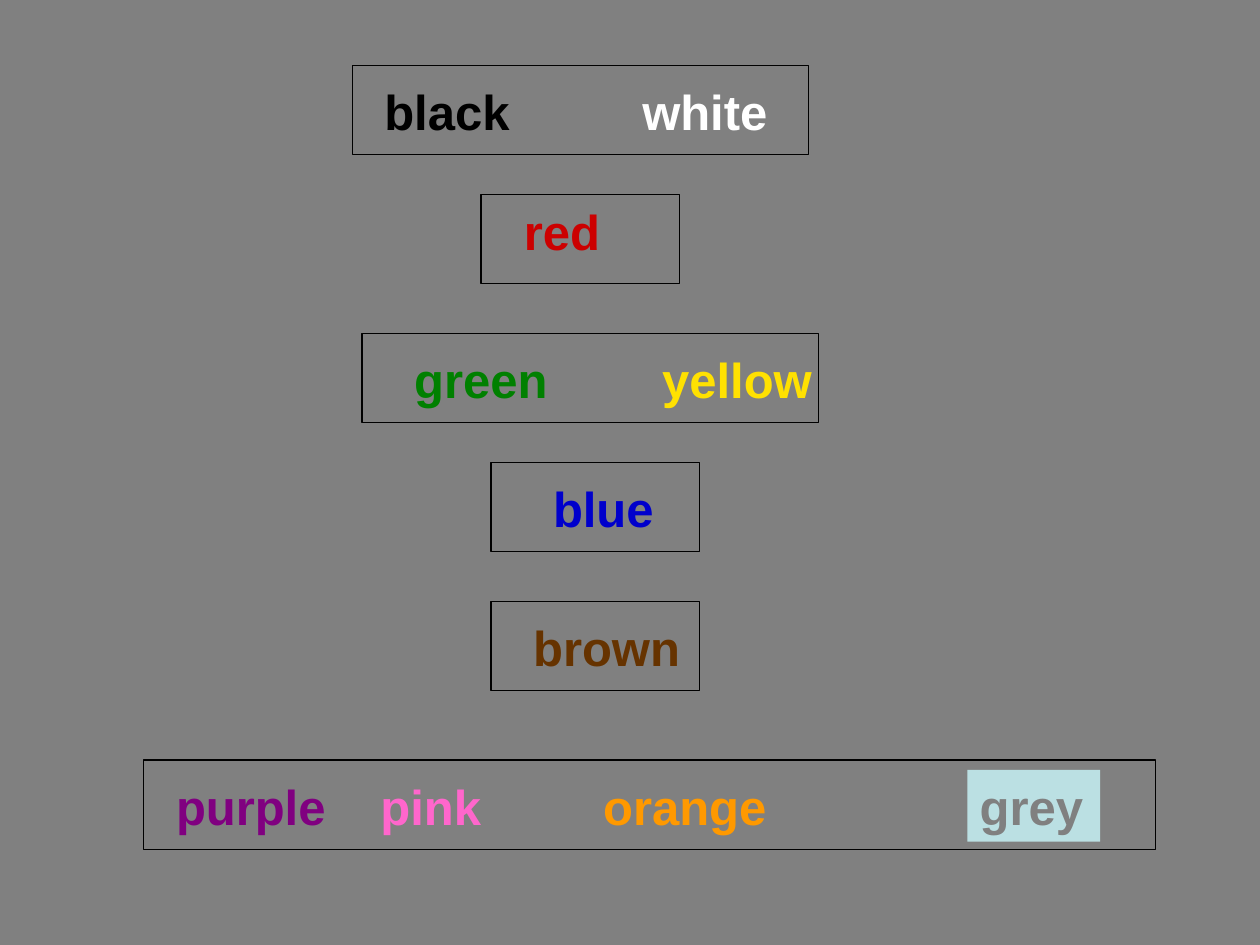
from pptx import Presentation
from pptx.dml.color import RGBColor
from pptx.enum.shapes import MSO_SHAPE
from pptx.enum.text import MSO_ANCHOR, MSO_AUTO_SIZE, PP_ALIGN
from pptx.util import Cm, Pt


def color(code):
    return RGBColor.from_string(code)


class Board:
    font = "Arial"
    size = 28
    ink = "000000"
    high = 1.45   # height of a word
    tall = 1.8    # height of a frame

    def __init__(self, slide, back):
        self.slide = slide
        fill = slide.background.fill
        fill.solid()
        fill.fore_color.rgb = color(back)

    def rect(self, left, top, width, height):
        shape = self.slide.shapes.add_shape(
            MSO_SHAPE.RECTANGLE, Cm(left), Cm(top), Cm(width), Cm(height))
        shape.shadow.inherit = False
        return shape

    def style(self, shape, text, code, wrap):
        frame = shape.text_frame
        frame.text = text
        frame.word_wrap = wrap
        frame.auto_size = MSO_AUTO_SIZE.SHAPE_TO_FIT_TEXT
        frame.vertical_anchor = MSO_ANCHOR.TOP
        line = frame.paragraphs[0]
        line.alignment = PP_ALIGN.LEFT
        font = line.runs[0].font
        font.name, font.size, font.bold = self.font, Pt(self.size), True
        font.color.rgb = color(code)

    def word(self, text, code, left, top, width, wrap):
        box = self.slide.shapes.add_textbox(
            Cm(left), Cm(top), Cm(width), Cm(self.high))
        self.style(box, text, code, wrap)

    def label(self, text, code, back, left, top, width):
        shape = self.rect(left, top, width, self.high)
        shape.fill.solid()
        shape.fill.fore_color.rgb = color(back)
        shape.line.fill.background()
        self.style(shape, text, code, False)

    def frame(self, left, top, width):
        shape = self.rect(left, top, width, self.tall)
        shape.fill.background()
        shape.line.color.rgb = color(self.ink)
        shape.line.width = Pt(0.75)


# Text, colour, left, top, width, wrap
WORDS = [
    ("black", "000000", 7.5, 1.52, 3.66, True),
    ("white", "FFFFFF", 12.7, 1.52, 3.6, True),
    ("red", "CC0000", 10.31, 3.94, 3.4, True),
    ("green", "008000", 8.1, 6.93, 3.76, True),
    ("yellow", "FFE101", 13.1, 6.93, 3.6, False),
    ("blue", "0000CC", 10.9, 9.53, 2.56, False),
    ("brown", "663300", 10.5, 12.32, 3.5, False),
    ("purple", "800080", 3.3, 15.52, 3.56, False),
    ("pink", "FF66CC", 7.42, 15.52, 3.5, True),
    ("orange", "FF9900", 11.91, 15.52, 3.84, False),
]

# Left, top, width
FRAMES = [
    (7.1, 1.32, 9.2),
    (7.3, 6.72, 9.2),
    (9.7, 3.92, 4),
    (9.9, 9.32, 4.2),
    (9.9, 12.12, 4.2),
    (2.9, 15.32, 20.4),
]


def main():
    deck = Presentation()
    deck.slide_width, deck.slide_height = Cm(25.4), Cm(19.05)
    board = Board(deck.slides.add_slide(deck.slide_layouts[6]), "808080")

    # Colour words
    for word in WORDS:
        board.word(*word)
    board.label("grey", "808080", "BBE0E3", 19.5, 15.52, 2.68)

    # Frames around each stage
    for place in FRAMES:
        board.frame(*place)

    deck.save("out.pptx")


if __name__ == "__main__":
    main()
